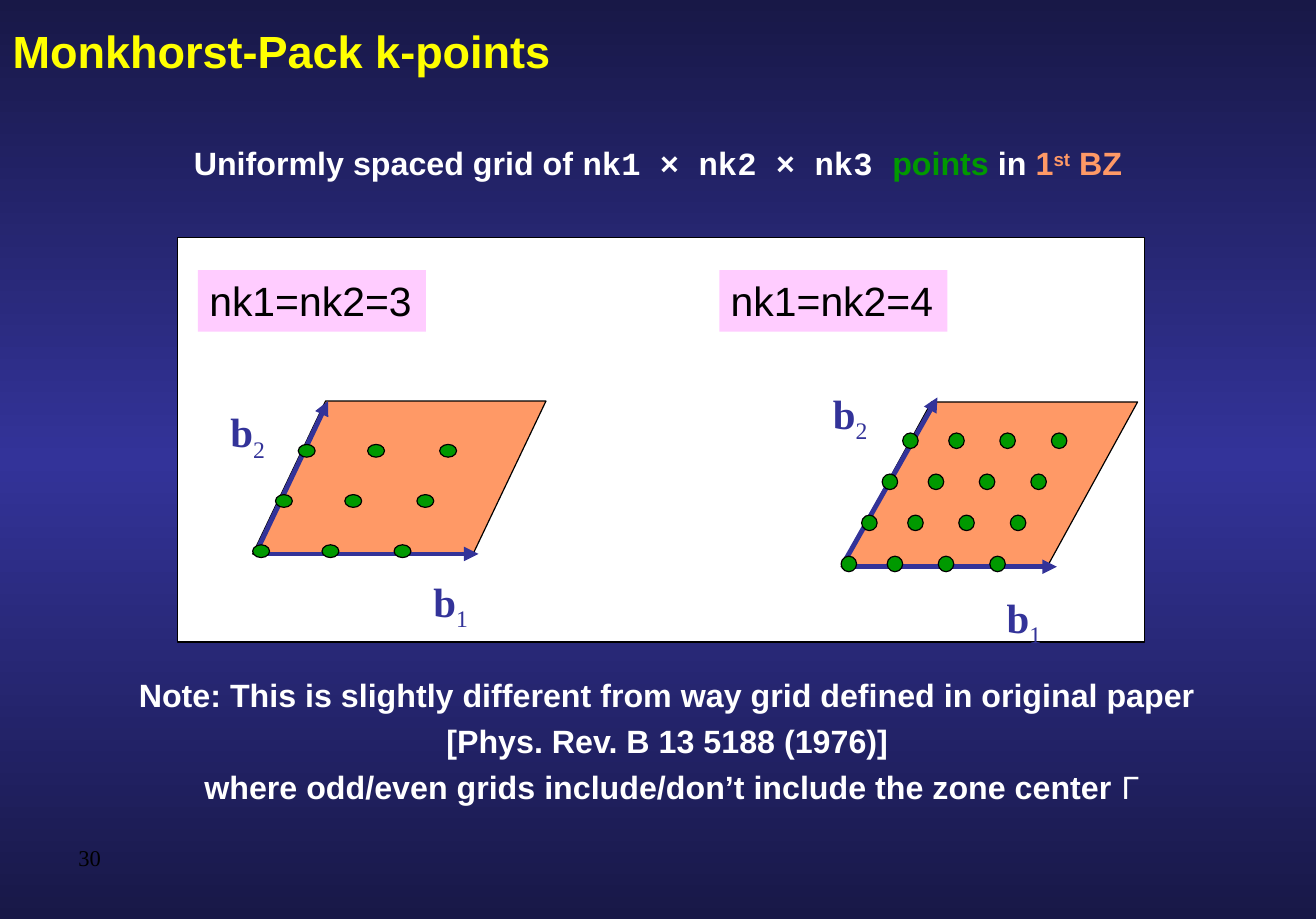
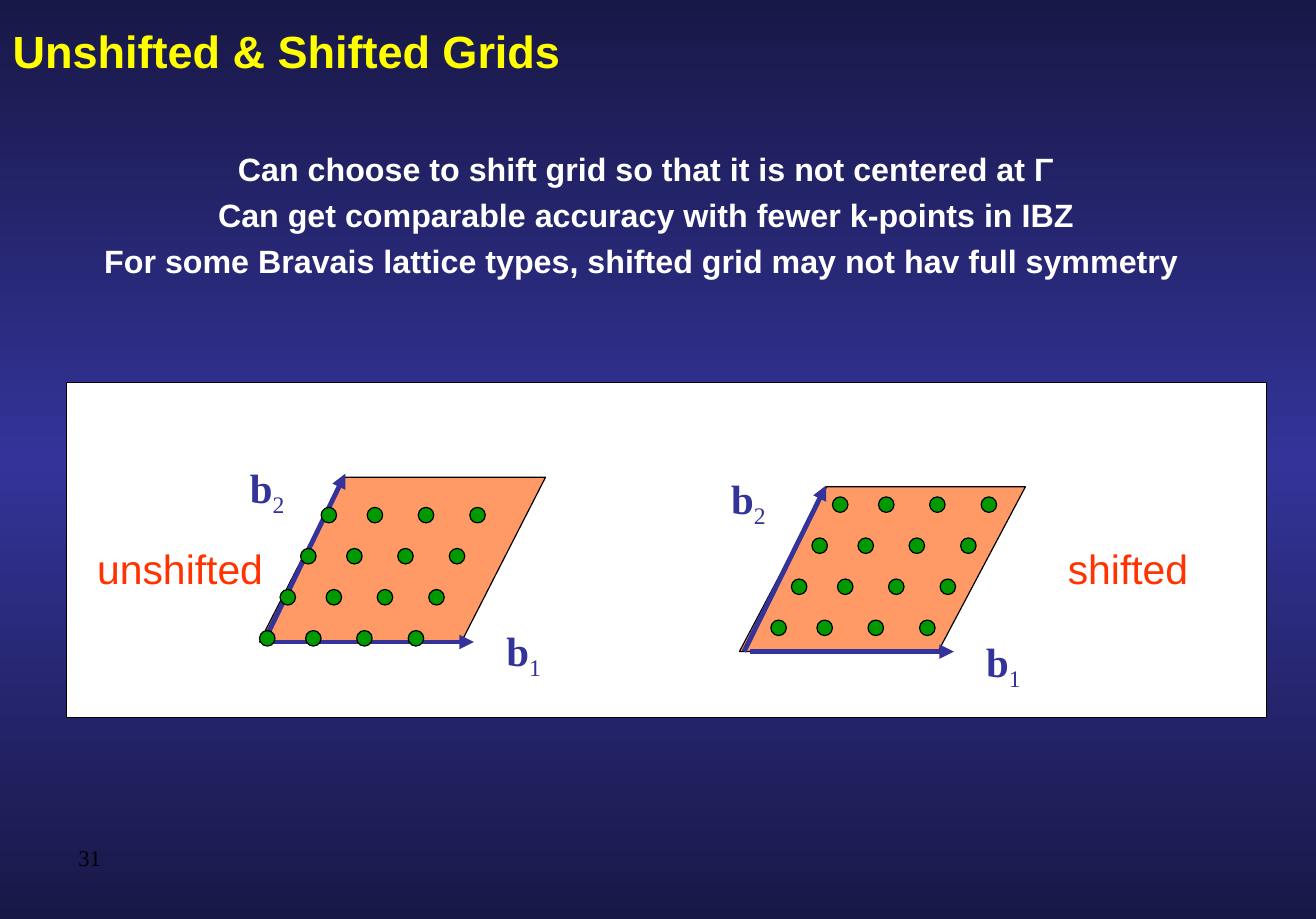
from copy import deepcopy
from itertools import product

from lxml.etree import SubElement
from pptx import Presentation
from pptx.dml.color import RGBColor
from pptx.enum.shapes import MSO_CONNECTOR as Link, MSO_SHAPE as Form
from pptx.enum.text import MSO_ANCHOR as Anchor, PP_ALIGN as Align
from pptx.oxml.ns import qn
from pptx.util import Cm, Pt

HUES = {
    "edge": "181847", "blue": "333399", "title": "FFFF00", "white": "FFFFFF",
    "black": "000000", "green": "009900", "cell": "FF9966", "tag": "FFCCFF",
    "red": "FF3300",
}
SANS, MONO, SERIF = "Arial", "Courier New", "Times New Roman"
BIG = 25.4

# Dot grids: column offsets, rows, row shift, row rise, dot size (cm)
GRID3 = dict(cols=(0, 1.52, 3.1), rows=3, lean=0.5, rise=1.1, dot=(0.37, 0.28))
GRID4 = dict(cols=(0, 1.01, 2.13, 3.26), rows=4, lean=0.45, rise=0.9,
             dot=(0.34, 0.34))


def hue(name):
    return RGBColor.from_string(HUES[name])


class Deck:
    def __init__(self):
        self.prs = Presentation()
        self.prs.slide_width, self.prs.slide_height = Cm(28.85), Cm(20.14)
        self.slide = None
        self.paint()

    def paint(self):
        """Put the shared gradient on the master."""
        fill = self.prs.slide_master.background.fill
        fill.gradient()
        fill.gradient_angle = 270
        first = fill.gradient_stops[0]._gs
        first.addnext(deepcopy(first))
        marks = ((0, "edge"), (0.5, "blue"), (1, "edge"))
        for stop, (pos, name) in zip(fill.gradient_stops, marks):
            stop.position = pos
            stop.color.rgb = hue(name)

    def page(self, title, num):
        self.slide = self.prs.slides.add_slide(self.prs.slide_layouts[6])
        self.text((0, 0, 25.96, 2.21), [title], size=28, color="title",
                  bold=True, pad=(0.28, 0.15), anchor=Anchor.MIDDLE)
        self.text((1.47, 18.37, 2, 0.95), [num], size=14, font=SERIF)

    def shape(self, form, box, fill, line="black"):
        item = self.slide.shapes.add_shape(form, *map(Cm, box))
        item.shadow.inherit = False
        item.fill.solid()
        item.fill.fore_color.rgb = hue(fill)
        item.line.color.rgb = hue(line)
        item.line.width = Pt(0.75)
        return item

    def text(self, box, lines, pad=(0.25, 0.13), anchor=Anchor.TOP,
             align=Align.LEFT, wrap=True, gap=0, fill=None, **look):
        """Each line is a string or a list of (string, changes) runs."""
        item = self.slide.shapes.add_textbox(*map(Cm, box))
        if fill:
            item.fill.solid()
            item.fill.fore_color.rgb = hue(fill)
        frame = item.text_frame
        frame.word_wrap, frame.vertical_anchor = wrap, anchor
        frame.margin_left = frame.margin_right = Cm(pad[0])
        frame.margin_top = frame.margin_bottom = Cm(pad[1])
        for i, line in enumerate(lines):
            para = frame.add_paragraph() if i else frame.paragraphs[0]
            para.alignment, para.space_before = align, Pt(gap)
            for words, diff in [(line, {})] if isinstance(line, str) else line:
                run = para.add_run()
                run.text = words
                self.style(run, **{**look, **diff})

    def style(self, run, size=20, font=SANS, color="black", bold=False, base=0):
        run.font.size, run.font.name, run.font.bold = Pt(size), font, bold
        run.font.color.rgb = hue(color)
        if base:
            run._r.get_or_add_rPr().set("baseline", str(base * 1000))

    def body(self, box, lines, pad=(0.25, 0.13)):
        self.text(box, lines, pad=pad, align=Align.CENTER, gap=4.6,
                  color="white", bold=True)

    def label(self, x, y, w, words, color="black", fill=None):
        self.text((x, y, w, 1.35), [words], wrap=False, size=BIG,
                  color=color, fill=fill)

    def arrow(self, start, end):
        line = self.slide.shapes.add_connector(
            Link.STRAIGHT, *map(Cm, (*start, *end)))
        line.line.color.rgb = hue("blue")
        line.line.width = Pt(3)
        SubElement(line.line._get_or_add_ln(), qn("a:tailEnd"), type="triangle")
        SubElement(line._element.spPr, qn("a:effectLst"))

    def dots(self, x, y, cols, rows, lean, rise, dot):
        for row, col in product(range(rows), cols):
            spot = (x + col + row * lean, y - row * rise)
            self.shape(Form.OVAL, (*spot, *dot), "green")

    def cell(self, box, skew, reach, tail, tip, names, origin, grid):
        """Draw a lattice cell; inner points are relative to its corner."""
        x, y, _, h = box

        def at(point):
            return x + point[0], y + point[1]

        self.shape(Form.PARALLELOGRAM, box, "cell").adjustments[0] = skew
        self.arrow(at((0.23, h)), at((0.23 + reach, h)))
        self.arrow(at(tail), at(tip))
        for i, spot in enumerate(names, 1):
            self.text((*at(spot), 1.32, 1.35),
                      [[("b", {"bold": True}), (str(i), {"base": -25})]],
                      wrap=False, size=BIG, font=SERIF, color="blue")
        self.dots(*at(origin), **grid)


def pack(deck):
    deck.page("Monkhorst-Pack k-points", "30")
    deck.shape(Form.RECTANGLE, (3.89, 5.21, 21.21, 8.86), "white")
    deck.body((3.73, 3, 21.39, 1.22), [[
        ("Uniformly spaced grid of ", {}),
        ("nk1 × nk2 × nk3 ", {"font": MONO}),
        ("points", {"color": "green"}),
        (" in ", {}),
        ("1", {"color": "cell"}),
        ("st", {"color": "cell", "base": 30}),
        (" BZ", {"color": "cell"}),
    ]], pad=(0.28, 0.15))
    for x, n in ((4.34, 3), (15.77, 4)):
        deck.label(x, 5.92, 5, f"nk1=nk2={n}", fill="tag")
    deck.body((1.93, 14.66, 25.6, 3.05), [
        "Note: This is slightly different from way grid defined in original paper ",
        "[Phys. Rev. B 13 5188 (1976)] ",
        [("where odd/even grids include/don’t include the zone center ", {}),
         ("Γ", {"bold": False})],
    ])
    deck.cell((5.54, 8.79, 6.43, 3.35), 0.477, 4.72, (0.13, 3.2), (1.65, 0),
              ((3.71, 3.71), (-0.74, 0)), (0, 3.15), GRID3)
    deck.cell((18.44, 8.81, 6.5, 3.61), 0.549, 4.5, (0.1, 3.45), (2.11, -0.1),
              ((3.38, 4.04), (-0.43, -0.43)), (0, 3.38), GRID4)


def shift(deck):
    deck.page("Unshifted & Shifted Grids", "31")
    deck.shape(Form.RECTANGLE, (1.45, 8.38, 26.31, 7.34), "white")
    deck.body((1.19, 3.12, 25.96, 3.73), [
        "Can choose to shift grid so that it is not centered at Γ",
        "Can get comparable accuracy with fewer k-points in IBZ",
        "For some Bravais lattice types, shifted grid may not hav full symmetry ",
    ], pad=(0.28, 0.15))
    deck.label(1.88, 11.79, 4.19, "unshifted", "red")
    deck.label(23.16, 11.79, 3.18, "shifted", "red")
    deck.cell((5.69, 10.46, 6.27, 3.61), 0.511, 4.47, (0.18, 3.43),
              (1.88, -0.08), ((5.16, 3.12), (-0.46, -0.46)), (0, 3.36), GRID4)
    deck.cell((16.21, 10.67, 6.27, 3.61), 0.53, 4.47, (0.1, 3.61),
              (1.9, -0.03), ((5.16, 3.15), (-0.43, -0.43)), (0.69, 2.92), GRID4)


def main():
    deck = Deck()
    pack(deck)
    shift(deck)
    deck.prs.save("out.pptx")


if __name__ == "__main__":
    main()
